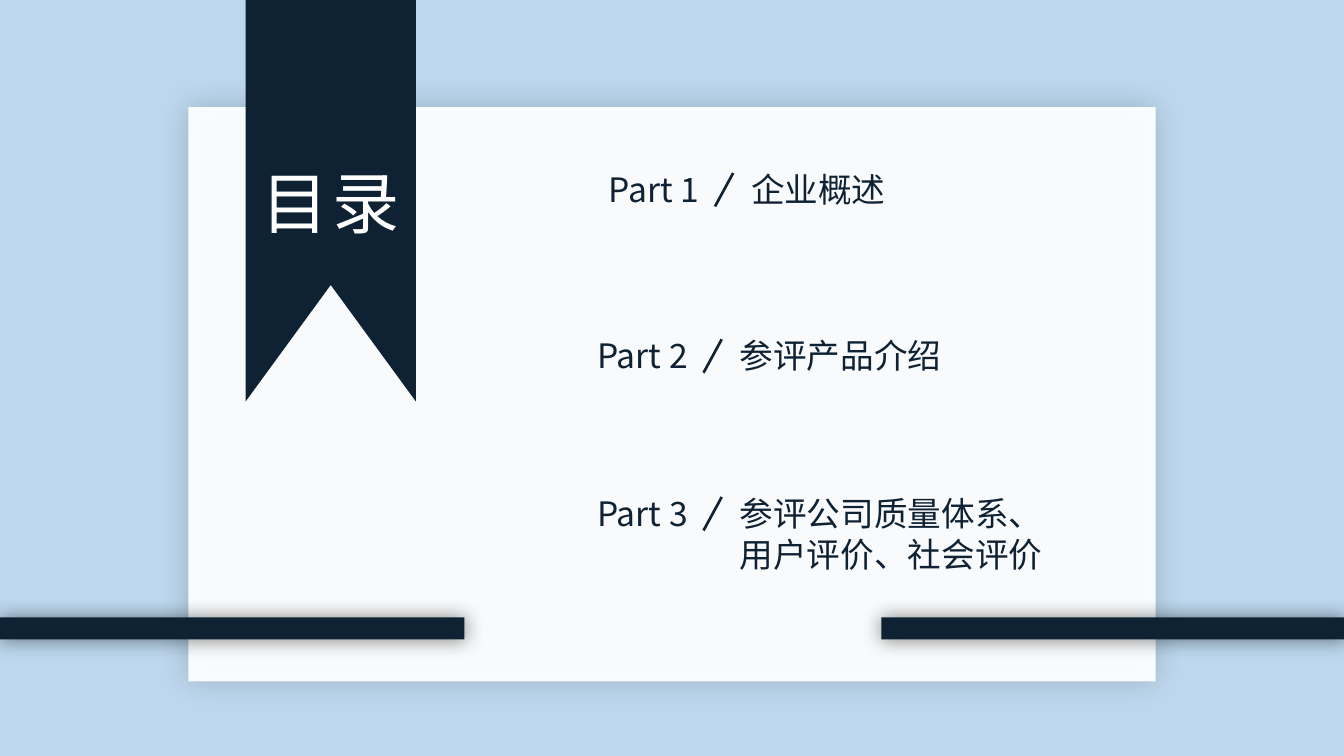
import pptx
import pptx.util
import pptx.dml.color
import pptx.enum.shapes
import pptx.enum.text
import pptx.oxml
import pptx.oxml.ns
import lxml.etree

Inches = pptx.util.Inches
Pt = pptx.util.Pt
qn = pptx.oxml.ns.qn
NAVY = "0E2234"
WHITE = "FFFFFF"
FACE = "Noto Sans CJK SC"


def color(code):
    return pptx.dml.color.RGBColor.from_string(code)


def apply(target, values):
    for name, value in values.items():
        setattr(target, name, value)


def paint(shape, code, alpha=100):
    shape.shadow.inherit = False
    shape.fill.solid()
    shape.fill.fore_color.rgb = color(code)
    shape.line.fill.background()
    if alpha < 100:
        tint = shape.fill._xPr.find(".//" + qn("a:srgbClr"))
        lxml.etree.SubElement(tint, qn("a:alpha"), val=str(alpha * 1000))


def glow(shape, alpha, blur):
    effects = shape._element.spPr.find(qn("a:effectLst"))
    shade = lxml.etree.SubElement(
        effects, qn("a:outerShdw"), blurRad=str(Pt(blur)), dist="0", dir="0",
        algn="ctr", rotWithShape="0")
    tint = lxml.etree.SubElement(shade, qn("a:srgbClr"), val="000000")
    lxml.etree.SubElement(tint, qn("a:alpha"), val=str(alpha * 1000))


def block(slide, box, code, alpha=100):
    kind = pptx.enum.shapes.MSO_SHAPE.RECTANGLE
    shape = slide.shapes.add_shape(kind, *map(Inches, box))
    paint(shape, code, alpha)
    return shape


def label(slide, box, text, size, code, align="LEFT", gap=0):
    frame = slide.shapes.add_textbox(*map(Inches, box)).text_frame
    frame.word_wrap = True
    para = frame.paragraphs[0]
    para.alignment = getattr(pptx.enum.text.PP_ALIGN, align)
    run = para.add_run()
    run.text = text
    apply(run.font, {"size": Pt(size), "name": FACE})
    run.font.color.rgb = color(code)
    props = run.font._element
    lxml.etree.SubElement(props, qn("a:ea"), typeface=FACE)
    if gap:
        props.set("spc", str(round(gap * 100)))


def ribbon(slide, box):
    left, top, width, height = box
    right, low = left + width, top + height
    notch = (left + width / 2, top + height * 0.71)
    points = [(right, top), (right, low), notch, (left, low)]
    pen = slide.shapes.build_freeform(
        Inches(left), Inches(top), scale=1.0)
    pen.add_line_segments([(Inches(x), Inches(y)) for x, y in points])
    paint(pen.convert_to_shape(), NAVY)
    label(slide, (left, top + 1.64, width, 0.95), "目录", 50.6, WHITE,
          "CENTER", 3.2)


def entry(slide, box, part, title):
    left, top, width, height = box
    label(slide, (left + 1.49, top, width - 1.49, height), title, 25.3, NAVY)
    label(slide, (left, top, 1.25, 0.53), part, 25.3, NAVY)
    ends = (left + 1.4, top + 0.09, left + 1.21, top + 0.44)
    slash = slide.shapes.add_connector(
        pptx.enum.shapes.MSO_CONNECTOR.STRAIGHT, *map(Inches, ends))
    slash.line.width = Pt(2)
    slash.line.color.rgb = color(NAVY)
    lxml.etree.SubElement(slash._element.spPr, qn("a:effectLst"))


def contents(slide, width, height):
    block(slide, (0, 0, width, height), "BDD7EE")
    card = block(slide, (1.97, 1.12, 10.12, 6.01), WHITE, 94)
    glow(card, 18, 22)
    ribbon(slide, (2.57, 0, 1.78, 4.2))
    entries = [
        ((6.27, 1.72, 4.65, 0.53), "企业概述"),
        ((6.15, 3.46, 4.65, 0.53), "参评产品介绍"),
        ((6.15, 5.11, 5.18, 0.95), "参评公司质量体系、用户评价、社会评价"),
    ]
    for number, (box, title) in enumerate(entries, 1):
        entry(slide, box, f"Part {number}", title)
    for left in (0, width - 4.84):
        glow(block(slide, (left, 6.46, 4.86, 0.23), NAVY), 50, 15)


def main():
    deck = pptx.Presentation()
    width, height = 14.06, 7.91
    apply(deck, {"slide_width": Inches(width),
                 "slide_height": Inches(height)})
    contents(deck.slides.add_slide(deck.slide_layouts[6]), width, height)
    deck.save("out.pptx")


if __name__ == "__main__":
    main()
